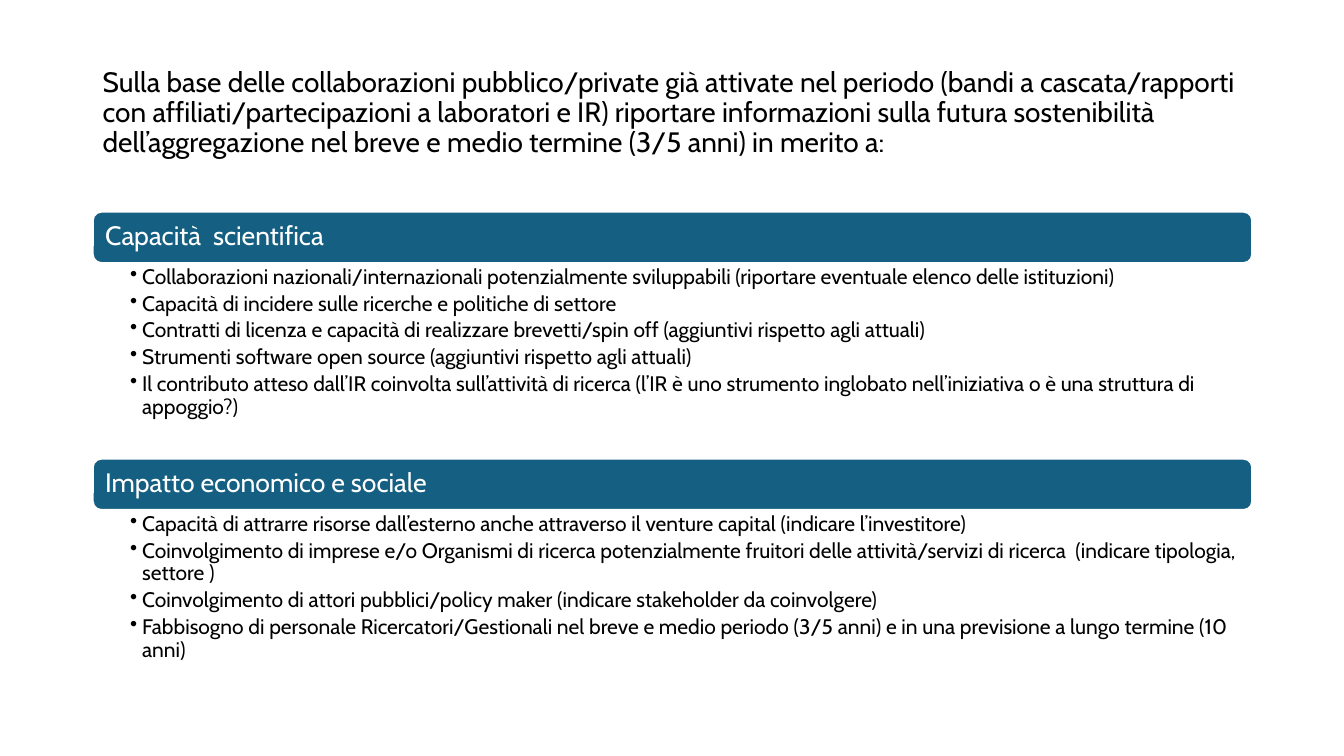
"""Build a slide on the future sustainability of public/private collaborations."""
from dataclasses import dataclass

from lxml import etree
from pptx import Presentation
from pptx.dml.color import RGBColor
from pptx.enum.shapes import MSO_SHAPE
from pptx.enum.text import MSO_ANCHOR, PP_ALIGN
from pptx.oxml.ns import qn
from pptx.util import Inches, Pt

ROUNDED = MSO_SHAPE.ROUNDED_RECTANGLE
MIDDLE, TOP = MSO_ANCHOR.MIDDLE, MSO_ANCHOR.TOP
LEFT = PP_ALIGN.LEFT


@dataclass(frozen=True)
class Theme:
    font: str = "Cabin"
    ink: RGBColor = RGBColor(0x00, 0x00, 0x00)
    white: RGBColor = RGBColor(0xFF, 0xFF, 0xFF)
    teal: RGBColor = RGBColor(0x15, 0x60, 0x82)
    intro_size: int = 20
    heading_size: int = 19
    point_size: int = 15


THEME = Theme()
MARGIN, WIDTH = 0.92, 11.5
BAR_HEIGHT = 0.51
HANG = 0.12

SECTIONS = [
    (2.1, 1.94, "Capacità  scientifica", [
        "Collaborazioni nazionali/internazionali potenzialmente sviluppabili (riportare eventuale elenco delle istituzioni)",
        "Capacità di incidere sulle ricerche e politiche di settore",
        "Contratti di licenza e capacità di realizzare brevetti/spin off (aggiuntivi rispetto agli attuali)",
        "Strumenti software open source (aggiuntivi rispetto agli attuali)",
        "Il contributo atteso dall’IR coinvolta sull’attività di ricerca (l’IR è uno strumento inglobato nell’iniziativa o è una struttura di appoggio?)",
    ]),
    (4.55, 1.59, "Impatto economico e sociale", [
        "Capacità di attrarre risorse dall’esterno anche attraverso il venture capital (indicare l’investitore)",
        "Coinvolgimento di imprese e/o Organismi di ricerca potenzialmente fruitori delle attività/servizi di ricerca  (indicare tipologia, settore )",
        "Coinvolgimento di attori pubblici/policy maker (indicare stakeholder da coinvolgere)",
        "Fabbisogno di personale Ricercatori/Gestionali nel breve e medio periodo (3/5 anni) e in una previsione a lungo termine (10 anni)",
    ]),
]


def write(shape, lines, size, color, anchor, insets, after=0):
    """Fill a shape with left-aligned paragraphs in the theme font."""
    frame = shape.text_frame
    frame.text = "\n".join(lines)
    frame.word_wrap = True
    frame.vertical_anchor = anchor
    frame.margin_left, frame.margin_top, frame.margin_right, frame.margin_bottom = map(Inches, insets)
    for paragraph in frame.paragraphs:
        paragraph.alignment = LEFT
        paragraph.line_spacing = 0.9
        paragraph.space_after = Pt(after)
        for run in paragraph.runs:
            run.font.name = THEME.font
            run.font.size = Pt(size)
            run.font.color.rgb = color


def add_bullet(paragraph):
    """Give a paragraph a round bullet with a hanging indent."""
    paragraph.level = 1
    properties = paragraph._p.get_or_add_pPr()
    properties.set("marL", str(Inches(HANG)))
    properties.set("indent", str(-Inches(HANG)))
    etree.SubElement(properties, qn("a:buChar")).set("char", "•")


deck = Presentation()
deck.slide_width, deck.slide_height = Inches(13.33), Inches(7.5)
slide = deck.slides.add_slide(deck.slide_layouts[6])

intro = slide.shapes.add_textbox(Inches(MARGIN), Inches(0.4), Inches(WIDTH), Inches(1.45))
write(intro, [
    "Sulla base delle collaborazioni pubblico/private già attivate nel periodo "
    "(bandi a cascata/rapporti con affiliati/partecipazioni a laboratori e IR) "
    "riportare informazioni sulla futura sostenibilità dell’aggregazione nel "
    "breve e medio termine (3/5 anni) in merito a:"
], THEME.intro_size, THEME.ink, MIDDLE, (0.1, 0.05, 0.1, 0.05))

for top, points_height, heading, points in SECTIONS:
    heading_bar = slide.shapes.add_shape(
        ROUNDED, Inches(MARGIN), Inches(top), Inches(WIDTH), Inches(BAR_HEIGHT))
    heading_bar.shadow.inherit = False
    heading_bar.fill.solid()
    heading_bar.fill.fore_color.rgb = THEME.teal
    heading_bar.line.color.rgb = THEME.white
    heading_bar.line.width = Pt(1.5)
    write(heading_bar, [heading], THEME.heading_size, THEME.white, MIDDLE, (0.1, 0.08, 0.1, 0.08))

    point_list = slide.shapes.add_textbox(
        Inches(MARGIN), Inches(top + BAR_HEIGHT), Inches(WIDTH), Inches(points_height))
    write(point_list, points, THEME.point_size, THEME.ink, TOP, (0.37, 0.03, 0.15, 0.03), after=3)
    for point in point_list.text_frame.paragraphs:
        add_bullet(point)

deck.save("out.pptx")
